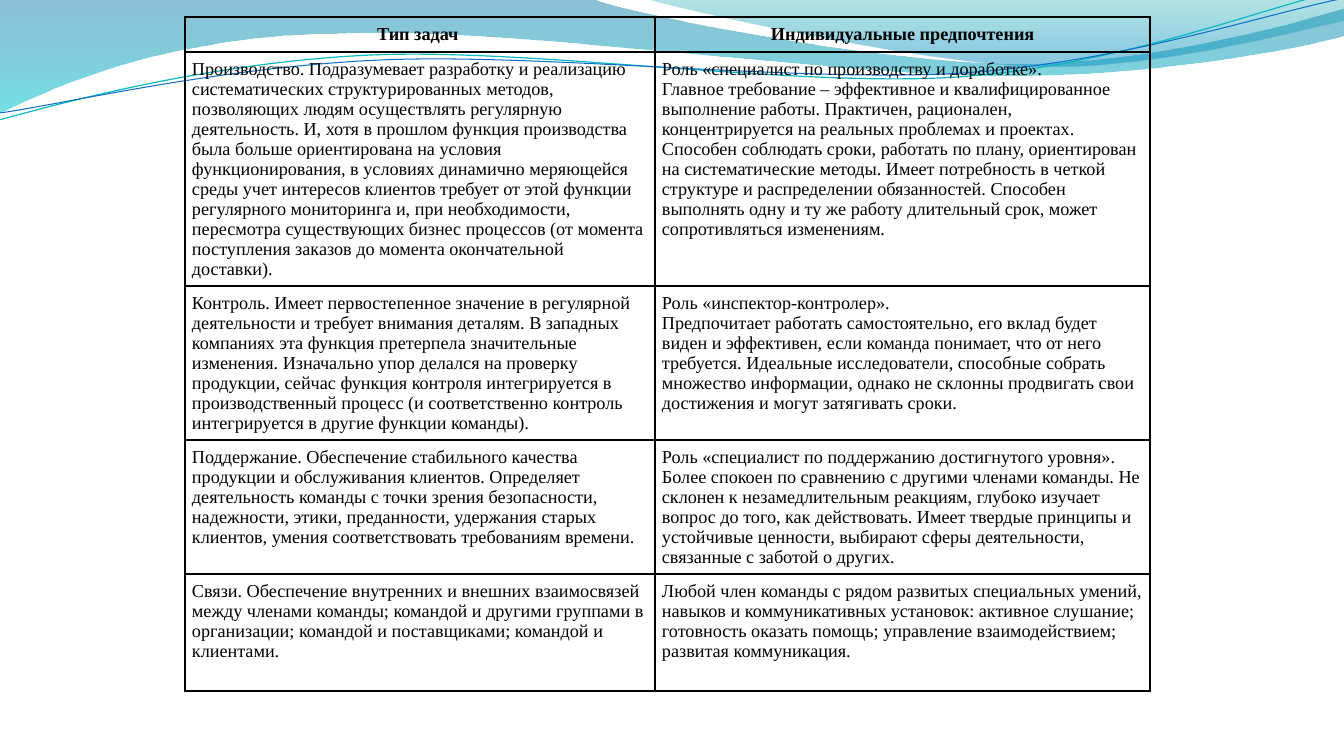
from pptx import Presentation
from pptx.dml.color import RGBColor
from pptx.enum.text import PP_ALIGN
from pptx.oxml import parse_xml
from pptx.oxml.ns import nsdecls, qn
from pptx.util import Emu, Pt
from lxml.etree import SubElement

SLIDE_WIDTH, SLIDE_HEIGHT = 1344, 756
EMU_PER_PX = 12192000 / SLIDE_WIDTH

HEADINGS = ["Тип задач ", "Индивидуальные предпочтения"]
TASKS = [
    (
        ["Производство. Подразумевает разработку и реализацию систематических структурированных методов, "
         "позволяющих людям осуществлять регулярную деятельность. И, хотя в прошлом функция производства "
         "была больше ориентирована на условия функционирования, в условиях динамично меряющейся среды "
         "учет интересов клиентов требует от этой функции регулярного мониторинга и, при необходимости, "
         "пересмотра существующих бизнес процессов (от момента поступления заказов до момента "
         "окончательной доставки)."],
        ["Роль «специалист по производству и доработке».",
         "Главное требование – эффективное и квалифицированное выполнение работы. Практичен, рационален, "
         "концентрируется на реальных проблемах и проектах. Способен соблюдать сроки, работать по плану, "
         "ориентирован на систематические методы. Имеет потребность в четкой структуре и распределении "
         "обязанностей. Способен выполнять одну и ту же работу длительный срок, может сопротивляться "
         "изменениям."],
    ),
    (
        ["Контроль. Имеет первостепенное значение в регулярной деятельности и требует внимания деталям. "
         "В западных компаниях эта функция претерпела значительные изменения. Изначально упор делался на "
         "проверку продукции, сейчас функция контроля интегрируется в производственный процесс "
         "(и соответственно контроль интегрируется в другие функции команды)."],
        ["Роль «инспектор-контролер».",
         "Предпочитает работать самостоятельно, его вклад будет виден и эффективен, если команда понимает, "
         "что от него требуется. Идеальные исследователи, способные собрать множество информации, однако "
         "не склонны продвигать свои достижения и могут затягивать сроки."],
    ),
    (
        ["Поддержание. Обеспечение стабильного качества продукции и обслуживания клиентов. Определяет "
         "деятельность команды с точки зрения безопасности, надежности, этики, преданности, удержания "
         "старых клиентов, умения соответствовать требованиям времени."],
        ["Роль «специалист по поддержанию достигнутого уровня». Более спокоен по сравнению с другими "
         "членами команды. Не склонен к незамедлительным реакциям, глубоко изучает вопрос до того, как "
         "действовать. Имеет твердые принципы и устойчивые ценности, выбирают сферы деятельности, "
         "связанные с заботой о других."],
    ),
    (
        ["Связи. Обеспечение внутренних и внешних взаимосвязей между членами команды; командой и другими "
         "группами в организации; командой и поставщиками; командой и клиентами."],
        ["Любой член команды с рядом развитых специальных умений, навыков и коммуникативных установок: "
         "активное слушание; готовность оказать помощь; управление взаимодействием; развитая "
         "коммуникация."],
    ),
]

# Outline steps: one point is a straight line, three points are a cubic curve.
WIDE_WAVE = [
    [(0, -1)], [(592, -1)],
    [(639, 17), (892, 64), (1019, 64)], [(1147, 64), (1288, 26), (1344, 9)],
    [(1346, 36)],
    [(1321, 44), (1169, 77), (1002, 76)], [(836, 76), (513, 28), (346, 34)],
    [(172, 35), (61, 84), (-1, 114)],
]
RIGHT_WAVE = [
    [(644, -1)],
    [(684, 11), (916, 62), (1033, 66)], [(1149, 70), (1292, 32), (1344, 21)],
    [(1344, 0)],
]
TEAL_STRAND = [
    [(-1, 120)],
    [(65, 102), (213, 62), (372, 55)], [(531, 48), (796, 88), (958, 77)],
    [(1119, 66), (1262, 8), (1342, -10)],
]
BLUE_STRAND = [
    [(0, 113)],
    [(64, 104), (220, 67), (381, 60)], [(541, 53), (802, 83), (963, 73)],
    [(1124, 62), (1265, 14), (1345, -2)],
]


def px(length):
    return Emu(round(length * EMU_PER_PX))


def color(hex_value):
    return RGBColor.from_string(hex_value)


class SlideArtist:
    font = "Times New Roman"
    size = Pt(13)
    ink = "000000"
    inset = 7

    def __init__(self, slide):
        self.slide = slide

    def outline(self, steps, close):
        """Build a freeform, joining the three points of each curve step into one cubic."""
        start, *rest = [point for step in steps for point in step]
        builder = self.slide.shapes.build_freeform(*start, scale=EMU_PER_PX)
        builder.add_line_segments(rest, close=close)
        shape = builder.convert_to_shape()
        shape.shadow.inherit = False
        segments = iter(list(shape._element.spPr.iter(qn("a:lnTo"))))
        for step in steps[1:]:
            first, *others = [next(segments) for _ in step]
            if others:
                first.tag = qn("a:cubicBezTo")
                for other in others:
                    first.append(other[0])
                    other.getparent().remove(other)
        return shape

    def wave(self, steps, stops):
        """Draw a closed shape shaded downwards; stops are (position, colour, opacity %)."""
        shape = self.outline(steps, True)
        shape.line.fill.background()
        shape.fill.gradient()
        shape.fill.gradient_angle = 270
        for stop, (position, hue, _) in zip(shape.fill.gradient_stops, stops):
            stop.position = position
            stop.color.rgb = color(hue)
        hues = shape._element.spPr.findall(".//" + qn("a:gs") + "/" + qn("a:srgbClr"))
        for hue, (_, _, opacity) in zip(hues, stops):
            SubElement(hue, qn("a:alpha"), val=str(opacity * 1000))

    def strand(self, steps, hue, width):
        shape = self.outline(steps, False)
        shape.fill.background()
        shape.line.color.rgb = color(hue)
        shape.line.width = Pt(width)

    def table(self, left, top, columns, heights, rows):
        """Draw a ruled table whose first row holds the headings; rows grow to fit their text."""
        grid = self.slide.shapes.add_table(
            len(heights), len(columns), px(left), px(top), px(sum(columns)), px(sum(heights))).table
        grid.first_row = grid.horz_banding = False
        for column, width in zip(grid.columns, columns):
            column.width = px(width)
        for row, height in zip(grid.rows, heights):
            row.height = px(height)
        for r, row in enumerate(rows):
            for c, paragraphs in enumerate(row):
                self.cell(grid.cell(r, c), paragraphs, heading=r == 0)

    def cell(self, cell, paragraphs, heading):
        cell.margin_left = cell.margin_right = px(self.inset)
        cell.margin_top = cell.margin_bottom = px(self.inset)
        properties = cell._tc.get_or_add_tcPr()
        for side in ("lnL", "lnR", "lnT", "lnB"):
            properties.append(parse_xml(
                f'<a:{side} {nsdecls("a")} w="{Pt(1)}"><a:solidFill>'
                f'<a:srgbClr val="{self.ink}"/></a:solidFill></a:{side}>'))
        cell.fill.background()
        frame = cell.text_frame
        for i, text in enumerate(paragraphs):
            paragraph = frame.add_paragraph() if i else frame.paragraphs[0]
            paragraph.alignment = PP_ALIGN.CENTER if heading else PP_ALIGN.LEFT
            run = paragraph.add_run()
            run.text = text
            run.font.name = self.font
            run.font.size = self.size
            run.font.bold = heading
            run.font.color.rgb = color(self.ink)


def main():
    deck = Presentation()
    deck.slide_width, deck.slide_height = px(SLIDE_WIDTH), px(SLIDE_HEIGHT)
    artist = SlideArtist(deck.slides.add_slide(deck.slide_layouts[6]))
    artist.wave(WIDE_WAVE, [(0, "0074A1", 45), (1, "00C6CF", 55)])
    artist.wave(RIGHT_WAVE, [(0, "00A1A9", 30), (0.8, "008BBF", 45)])
    artist.strand(TEAL_STRAND, "0AB8BF", 0.85)
    artist.strand(BLUE_STRAND, "0F6FC6", 0.75)
    artist.table(185, 17, [470, 495], [35, 128, 128, 98, 117],
                 [[[heading] for heading in HEADINGS], *TASKS])
    deck.save("out.pptx")


if __name__ == "__main__":
    main()
